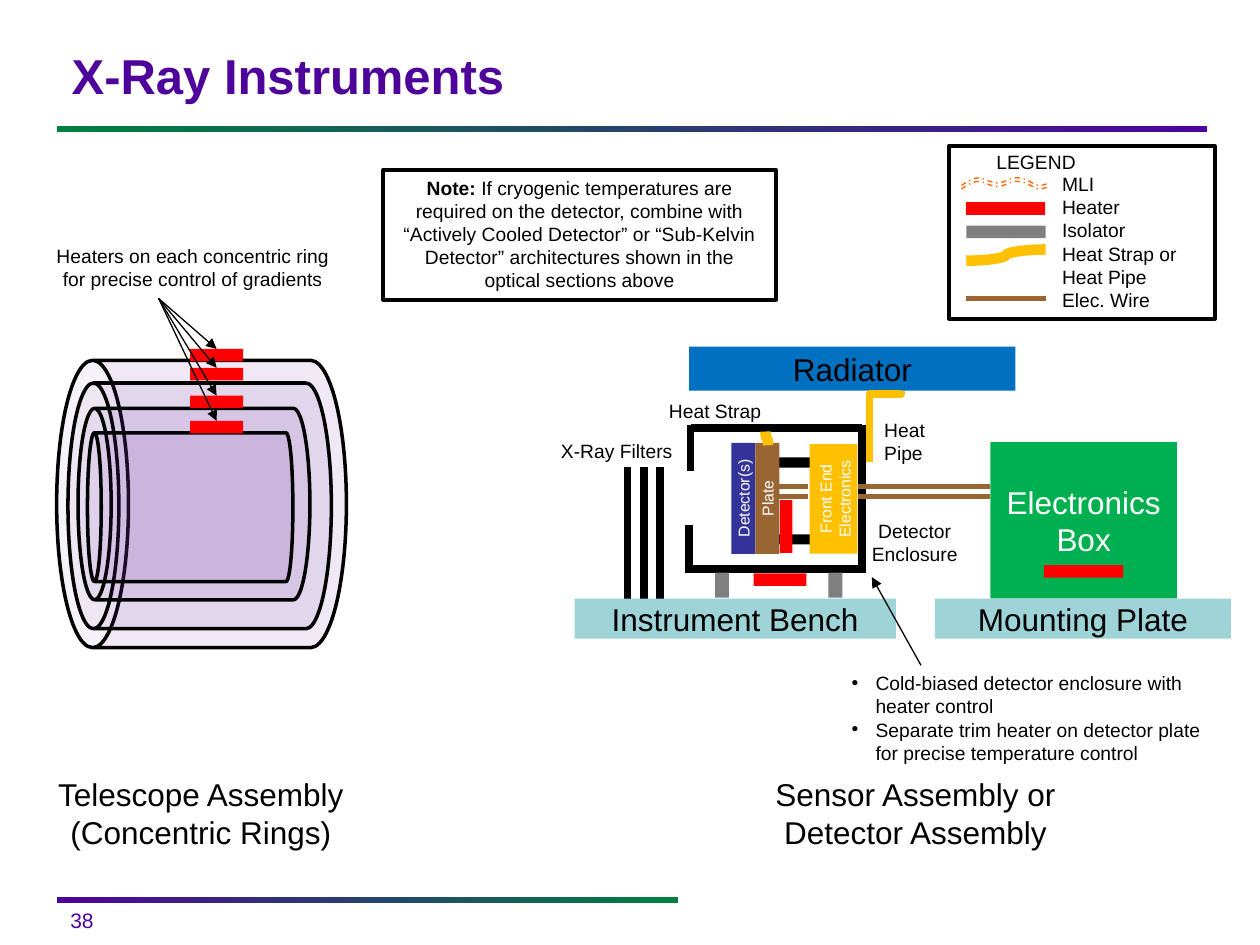
from lxml import etree
from pptx import Presentation
from pptx.dml.color import RGBColor
from pptx.enum.dml import MSO_LINE
from pptx.enum.shapes import MSO_CONNECTOR, MSO_SHAPE
from pptx.enum.text import MSO_ANCHOR, PP_ALIGN
from pptx.oxml.ns import qn
from pptx.util import Pt

RECT, CAN = MSO_SHAPE.RECTANGLE, MSO_SHAPE.CAN
STRAIGHT, ELBOW, CURVE = MSO_CONNECTOR.STRAIGHT, MSO_CONNECTOR.ELBOW, MSO_CONNECTOR.CURVE
LEFT, CENTER, RIGHT = PP_ALIGN.LEFT, PP_ALIGN.CENTER, PP_ALIGN.RIGHT
TOP, MIDDLE = MSO_ANCHOR.TOP, MSO_ANCHOR.MIDDLE

BLACK, WHITE, RED, GRAY = "000000", "FFFFFF", "FF0000", "808080"
BROWN, GOLD, TEAL, VIOLET, GREEN = "996633", "FFC000", "9ED3D7", "4E039A", "008040"

RULES = [
    ((32.4, 72, 657.4, 3.6), (GREEN, VIOLET)),
    ((32.4, 512.6, 355, 3.6), (VIOLET, GREEN)),
]
ENCLOSURE = [
    (394.6, 244.8, 492.5, 244.8),
    (391.7, 325.4, 494.7, 325.4),
    (492.5, 242.6, 492.5, 327.6),
    (394.6, 242.6, 394.6, 269.3),
    (393.8, 300.2, 393.8, 327.6),
]
FILTERS = [(x, 267.1, x, 342) for x in (358.6, 367.9, 377.3)]
WIRES = [(x1, y, x2, y) for x1, x2 in ((443, 461.5), (490.3, 565.9)) for y in (277.9, 283.7)]
WIRES.append((552.2, 170.6, 597.6, 170.6))

BLOCKS = [
    ((328.3, 342, 183.6, 23), TEAL),
    ((534.2, 342, 169.2, 23), TEAL),
    ((393.8, 198, 186.5, 25.2), "0070C0"),
    ((565.9, 252.7, 106.6, 89.3), "00B050"),
    ((443.5, 261.4, 19.4, 5.8), BLACK),
    ((443.5, 305.3, 19.4, 5.8), BLACK),
    ((408.6, 327.2, 7.9, 14.4), GRAY),
    ((473.4, 327.2, 7.9, 14.4), GRAY),
    ((552.2, 128.9, 45.4, 7.2), GRAY),
    ((445.7, 285.8, 7.2, 30.2), RED),
    ((430.6, 327.6, 30.2, 7.2), RED),
    ((551.9, 115.6, 45.4, 7.2), RED),
    ((596.5, 322.9, 45.4, 7.2), RED),
]
BLOCK_TEXT = [("Instrument Bench", BLACK), ("Mounting Plate", BLACK),
              ("Radiator", BLACK), ("Electronics Box", WHITE)]
UPRIGHT_BLOCKS = [
    ((393.1, 277.9, 63.4, 13.7), "333399", "Detector(s)", MIDDLE),
    ((445, 271.4, 62.6, 27.4), GOLD, "Front End Electronics", TOP),
    ((406.8, 277.9, 63.4, 13.7), BROWN, "Plate", MIDDLE),
]
RINGS = [
    ((33.1, 205.2, 164.2, 165.6), 0.25),
    ((43.9, 213.8, 140.4, 150.5), 0.207),
    ((56.2, 221.8, 109.4, 132.5), 0.173),
    ((66.2, 231.1, 85, 117.4), 0.093),
]
RING_HEATER_TOPS = [199.4, 210.2, 226.1, 240.5]
ARROW_START = (90.7, 170.6)

LABELS = [
    ((489.6, 293, 66.2, 33.8), ["Detector Enclosure"], CENTER),
    ((327.6, 224.6, 114.5, 20.9), ["Heat Strap"], RIGHT),
    ((295.2, 247.7, 114.5, 20.9), ["X-Ray Filters"], CENTER),
    ((498.2, 235.4, 41, 33.8), ["Heat", "Pipe"], LEFT),
    ((599.8, 95, 89.3, 87.1),
     ["MLI", "Heater", "Isolator", "Heat Strap or Heat Pipe", "Elec. Wire"], LEFT),
    ((562.3, 82.1, 62.6, 20.9), ["LEGEND"], LEFT),
    ((23.2, 136.1, 174, 33.8),
     ["Heaters on each concentric ring for precise control of gradients"], CENTER),
]
CAPTIONS = [
    ((23, 452.9, 183.6, 23), "Telescope Assembly (Concentric Rings)"),
    ((431.3, 452.9, 183.6, 23), "Sensor Assembly or Detector Assembly"),
]
BULLETS = ["Cold-biased detector enclosure with heater control",
           "Separate trim heater on detector plate for precise temperature control"]
NOTE = [("Note:", True),
        (" If cryogenic temperatures are required on the detector, combine with "
         "“Actively Cooled Detector” or “Sub-Kelvin Detector” architectures shown "
         "in the optical sections above", False)]
MLI_CURVE = [
    (549.4, 108), (553, 105.8), (555.8, 103.7), (559.4, 103.7),
    (562.3, 103.7), (565.9, 106.6), (570.2, 106.6),
    (573.8, 106.6), (578.2, 103), (581.8, 103.7),
    (586.1, 103.7), (590.4, 107.3), (593.3, 108),
    (596.2, 108), (598.3, 107.3), (599.8, 105.8),
]


def rgb(value):
    return RGBColor.from_string(value)


def add_block(box, fill=None, kind=RECT, line=None, width=2, rotation=0):
    sp = s.shapes.add_shape(kind, *map(Pt, box))
    sp.shadow.inherit = False
    sp.rotation = rotation
    if fill:
        sp.fill.solid()
        sp.fill.fore_color.rgb = rgb(fill)
    else:
        sp.fill.background()
    if line:
        sp.line.color.rgb = rgb(line)
        sp.line.width = Pt(width)
    else:
        sp.line.fill.background()
    return sp


def set_text(sp, lines, size, color=BLACK, align=CENTER, anchor=MIDDLE):
    tf = sp.text_frame
    tf.word_wrap = True
    tf.vertical_anchor = anchor
    tf.text = "\n".join(lines)
    for p in tf.paragraphs:
        p.alignment = align
        p.font.name = "Arial"
        p.font.size = Pt(size)
        p.font.color.rgb = rgb(color)
    return tf


def add_text(box, lines, size, color=BLACK, align=CENTER, anchor=TOP):
    return set_text(s.shapes.add_textbox(*map(Pt, box)), lines, size, color, align, anchor)


def add_line(ends, color, width, kind=STRAIGHT, rotation=0, arrow=False):
    cx = s.shapes.add_connector(kind, *map(Pt, ends))
    cx.line.color.rgb = rgb(color)
    cx.line.width = Pt(width)
    sp_pr = cx._element.spPr
    if arrow:
        etree.SubElement(cx.line._get_or_add_ln(), qn("a:tailEnd"), type="triangle")
    etree.SubElement(sp_pr, qn("a:effectLst"))
    if rotation:
        sp_pr.find(qn("a:xfrm")).set("rot", str(rotation * 60000))
    return cx


def bezier_points(points, steps=8):
    for i in range(0, len(points) - 1, 3):
        for k in range(1, steps + 1):
            t = k / steps
            weights = ((1 - t) ** 3, 3 * t * (1 - t) ** 2, 3 * t * t * (1 - t), t ** 3)
            yield tuple(sum(w * q[axis] for w, q in zip(weights, points[i:i + 4]))
                        for axis in (0, 1))


prs = Presentation()
prs.slide_width, prs.slide_height = Pt(720), Pt(540)
s = prs.slides.add_slide(prs.slide_layouts[5])

title = s.shapes.title
title.left, title.top, title.width, title.height = map(Pt, (33.8, 14.4, 653, 62.6))
p = set_text(title, ["X-Ray Instruments"], 28, VIOLET, LEFT).paragraphs[0]
p.font.bold = True
p.line_spacing = 0.8

for box, colors in RULES:
    sp = add_block(box)
    sp.fill.gradient()
    sp.fill.gradient_angle = 0
    for stop, color in zip(sp.fill.gradient_stops, colors):
        stop.color.rgb = rgb(color)
add_text((33.1, 514.8, 28.8, 21.6), ["38"], 12, VIOLET, LEFT).word_wrap = False

for ends in ENCLOSURE + FILTERS:
    add_line(ends, BLACK, 4.5)
for ends in WIRES:
    add_line(ends, BROWN, 2.75)

blocks = [add_block(box, fill) for box, fill in BLOCKS]
for sp, (text, color) in zip(blocks, BLOCK_TEXT):
    set_text(sp, [text], 18, color)
for box, fill, text, anchor in UPRIGHT_BLOCKS:
    set_text(add_block(box, fill, rotation=270), [text], 9, WHITE, anchor=anchor)

add_line((434.2, 251.3, 442.1, 249.8), GOLD, 6, CURVE, 270)
add_line((552.2, 149, 597.6, 142.6), GOLD, 6, CURVE)
pipe = add_line((526.3, 252.7, 485.3, 234.7), GOLD, 4.5, ELBOW, 90)
guides = pipe._element.spPr.find(qn("a:prstGeom")).find(qn("a:avLst"))
etree.SubElement(guides, qn("a:gd"), name="adj1", fmla="val 94700")

for box, depth in RINGS:
    sp = add_block(box, "7030A0", CAN, BLACK, rotation=270)
    sp.adjustments[0] = depth
    color = sp.fill._xPr.find(qn("a:solidFill"))[0]
    etree.SubElement(color, qn("a:alpha"), val="10000")
ring_heaters = [add_block((108.7, top, 30.2, 7.2), RED) for top in RING_HEATER_TOPS]

for offset in (0, -2):
    points = [(Pt(x), Pt(y + offset)) for x, y in [MLI_CURVE[0], *bezier_points(MLI_CURVE)]]
    builder = s.shapes.build_freeform(*points[0])
    builder.add_line_segments(points[1:], close=False)
    sp = builder.convert_to_shape()
    sp.shadow.inherit = False
    sp.fill.background()
    sp.line.color.rgb = rgb("FF6600")
    sp.line.width = Pt(0.75)
    sp.line.dash_style = MSO_LINE.DASH_DOT

add_block((542.2, 83.5, 151.9, 98.6), line=BLACK, width=2.25)
for box, lines, align in LABELS:
    add_text(box, lines, 11, align=align)
for box, text in CAPTIONS:
    add_text(box, [text], 18, anchor=MIDDLE)

for heater in ring_heaters:
    add_line(ARROW_START * 2, BLACK, 0.75, arrow=True).end_connect(heater, 0)
add_line((526.3, 380.2, 498.2, 329.8), BLACK, 0.75, arrow=True)

for p in add_text((479.5, 380.2, 224.6, 60.5), BULLETS, 11, align=LEFT).paragraphs:
    p_pr = p._p.get_or_add_pPr()
    p_pr.set("marL", str(Pt(13.7)))
    p_pr.set("indent", str(-Pt(13.7)))
    p_pr.insert(0, p_pr.makeelement(qn("a:buFont"), {"typeface": "Arial"}))
    p_pr.insert(1, p_pr.makeelement(qn("a:buChar"), {"char": "•"}))

note = add_block((218.9, 97.2, 224.6, 74.2), WHITE, line=BLACK)
p = set_text(note, [""], 11, anchor=TOP).paragraphs[0]
for text, bold in NOTE:
    r = p.add_run()
    r.text = text
    r.font.bold = bold

prs.save("out.pptx")
